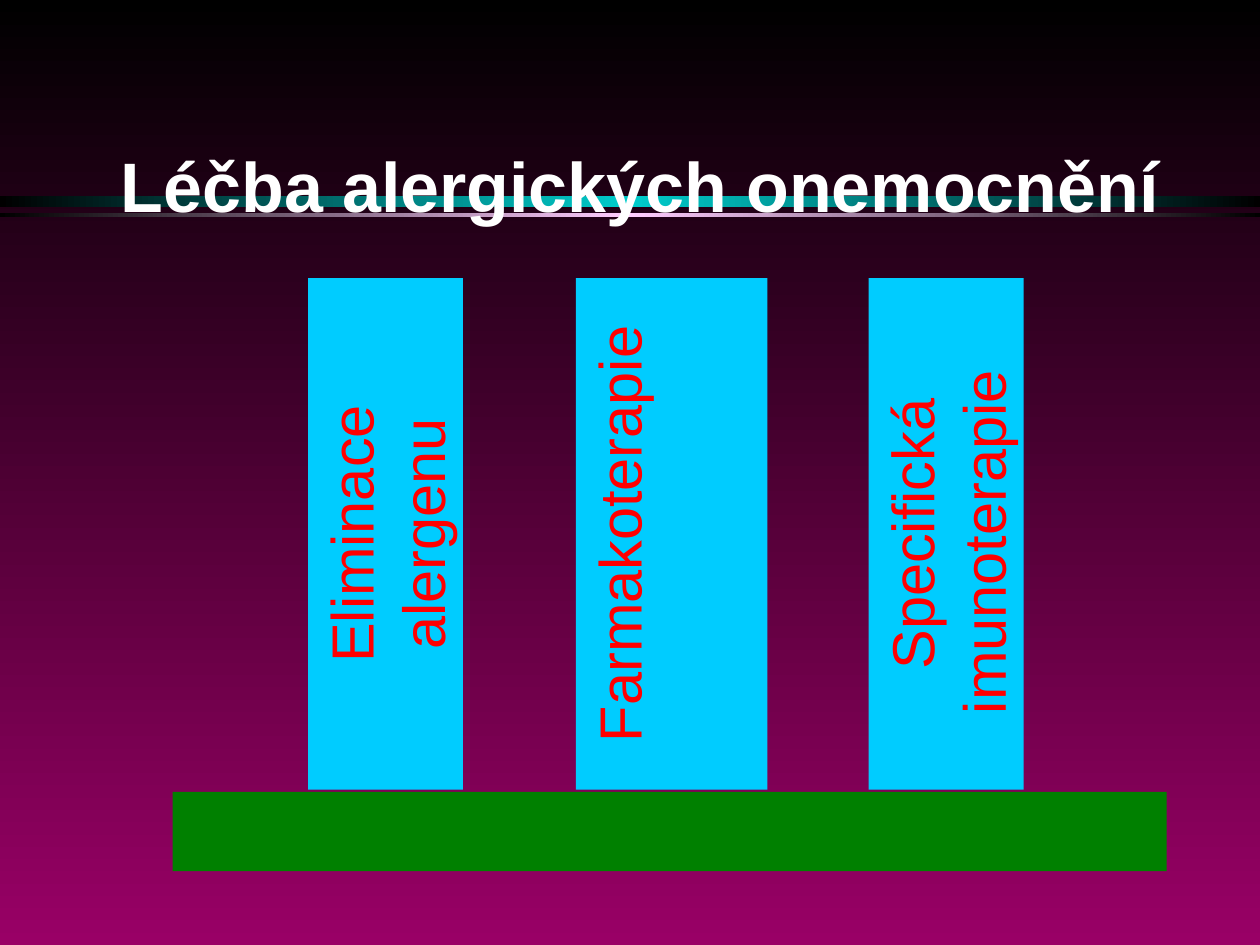
import copy
import pptx
import pptx.util
import pptx.dml.color
import pptx.enum.shapes
import pptx.enum.text

prs = pptx.Presentation()
prs.slide_width = W = pptx.util.Inches(10)
prs.slide_height = H = pptx.util.Inches(7.5)
s = prs.slides.add_slide(prs.slide_layouts[5])
RECT = pptx.enum.shapes.MSO_SHAPE.RECTANGLE
rgb = pptx.dml.color.RGBColor.from_string


def add_rect(x, y, w, h, color=None):
    sp = s.shapes.add_shape(RECT, int(x * W), int(y * H), int(w * W), int(h * H))
    sp.shadow.inherit = False
    sp.line.fill.background()
    if color:
        sp.fill.solid()
        sp.fill.fore_color.rgb = rgb(color)
    return sp


def write(sp, text, frame, para, font, color):
    tf = sp.text_frame
    tf.text = text
    p = tf.paragraphs[0]
    r = p.runs[0]
    for obj, values in ((tf, frame), (p, para), (r.font, font)):
        for name, value in values.items():
            setattr(obj, name, value)
    r.font.color.rgb = rgb(color)


fill = s.background.fill
fill.gradient()
fill.gradient_angle = 270
for stop, color in zip(fill.gradient_stops, ("000000", "990066")):
    stop.color.rgb = rgb(color)

for y, h, color in ((0.208, 0.011, "00CCCC"), (0.225, 0.005, "FFCCFF")):
    sp = add_rect(0, y, 1, h)
    sp.fill.gradient()
    sp.fill.gradient_angle = 0
    first = sp._element.spPr.xpath(".//a:gs")[0]
    first.addnext(copy.deepcopy(first))
    first.getnext().set("pos", "50000")
    for stop, c in zip(sp.fill.gradient_stops, ("000000", color, "000000")):
        stop.color.rgb = rgb(c)

ANCHOR = pptx.enum.text.MSO_ANCHOR
CENTER = {"alignment": pptx.enum.text.PP_ALIGN.CENTER}

title = s.shapes.title
s.shapes._spTree.append(title._element)
box = {"left": 0, "top": int(0.08 * H), "width": W, "height": int(H / 6)}
for name, value in box.items():
    setattr(title, name, value)
write(title, " Léčba alergických onemocnění",
      {"vertical_anchor": ANCHOR.BOTTOM, "word_wrap": True,
       "auto_size": pptx.enum.text.MSO_AUTO_SIZE.NONE},
      CENTER, {"name": "Arial", "size": pptx.util.Pt(40), "bold": True}, "FFFFFF")

add_rect(0.137, 0.838, 0.789, 0.084, "008000")

posts = (("Eliminace alergenu", 0.306, 0.123),
         ("Farmakoterapie", 0.533, 0.152),
         ("Specifická imunoterapie ", 0.751, 0.123))
length, middle = 0.406, 0.565
for text, center, thick in posts:
    h = thick * W / H
    sp = add_rect(center - length / 2, middle - h / 2, length, h, "00CCFF")
    sp.rotation = 270
    write(sp, text, {"vertical_anchor": ANCHOR.TOP, "word_wrap": True},
          CENTER, {"name": "Arial", "size": pptx.util.Pt(34)}, "FF0000")

prs.save("out.pptx")
